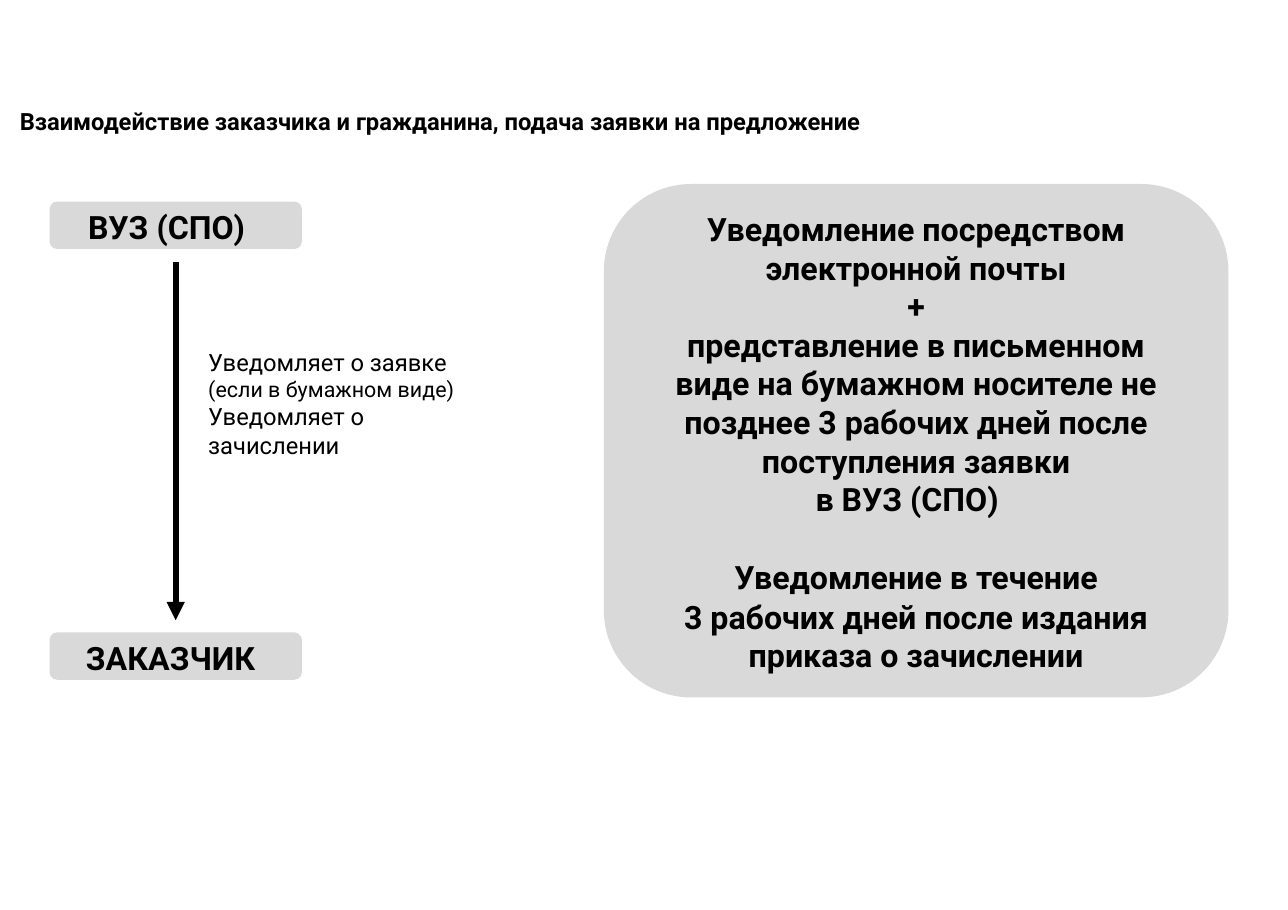
"""Build a slide on how a university notifies the customer about applications."""
import dataclasses
import typing

import lxml.etree
import pptx
import pptx.dml.color
import pptx.enum.shapes
import pptx.enum.text
import pptx.oxml.ns
import pptx.util

Inches, Pt = pptx.util.Inches, pptx.util.Pt
ALIGN, ANCHOR = pptx.enum.text.PP_ALIGN, pptx.enum.text.MSO_ANCHOR
WIDTH, HEIGHT = Inches(11.69), Inches(8.26)


@dataclasses.dataclass(frozen=True)
class Theme:
    font: str = "Roboto"
    ink: str = "000000"
    panel: str = "D9D9D9"
    large: float = 21
    body: float = 15.5
    small: float = 14
    arrow: float = 4


THEME = Theme()


class Area(typing.NamedTuple):
    """Percentages of the slide's width and height."""
    left: float
    top: float
    width: float
    height: float


class Line(typing.NamedTuple):
    text: str
    size: float = THEME.large
    bold: bool = True
    align: ALIGN = ALIGN.LEFT
    before: float = 0
    spacing: typing.Any = 1.0
    indent: float = 0


class Block(typing.NamedTuple):
    area: Area
    lines: list[Line]
    left: float = 0.01
    top: float = 0.02
    radius: float = 0
    anchor: ANCHOR = ANCHOR.TOP


def across(share: float) -> int:
    return round(WIDTH * share / 100)


def down(share: float) -> int:
    return round(HEIGHT * share / 100)


def rgb(value: str) -> pptx.dml.color.RGBColor:
    return pptx.dml.color.RGBColor.from_string(value)


def write_line(p: typing.Any, line: Line) -> None:
    p.text = line.text
    p.alignment = line.align
    p.space_before = Pt(line.before)
    p.line_spacing = line.spacing
    if line.indent:
        p._p.get_or_add_pPr().set("marL", str(Inches(line.indent)))
    for r in p.runs:
        r.font.name = THEME.font
        r.font.size = Pt(line.size)
        r.font.bold = line.bold
        r.font.color.rgb = rgb(THEME.ink)


def draw_block(s: typing.Any, block: Block) -> None:
    a = block.area
    box = across(a.left), down(a.top), across(a.width), down(a.height)
    if block.radius:
        sp = s.shapes.add_shape(pptx.enum.shapes.MSO_SHAPE.ROUNDED_RECTANGLE, *box)
        sp.adjustments[0] = block.radius
        sp.shadow.inherit = False
        sp.fill.solid()
        sp.fill.fore_color.rgb = rgb(THEME.panel)
        sp.line.fill.background()
    else:
        sp = s.shapes.add_textbox(*box)
    tf = sp.text_frame
    tf.word_wrap = True
    tf.vertical_anchor = block.anchor
    tf.margin_left, tf.margin_top = Inches(block.left), Inches(block.top)
    tf.margin_right = tf.margin_bottom = 0
    for i, line in enumerate(block.lines):
        write_line(tf.add_paragraph() if i else tf.paragraphs[0], line)


def draw_arrow(s: typing.Any, x: float, top: float, bottom: float) -> None:
    cx = s.shapes.add_connector(pptx.enum.shapes.MSO_CONNECTOR.STRAIGHT,
                                across(x), down(top), across(x), down(bottom))
    cx.line.color.rgb = rgb(THEME.ink)
    cx.line.width = Pt(THEME.arrow)
    qn = pptx.oxml.ns.qn
    lxml.etree.SubElement(cx.line._get_or_add_ln(), qn("a:tailEnd"), type="triangle")
    lxml.etree.SubElement(cx._element.spPr, qn("a:effectLst"))


def label(text: str, top: float, left: float) -> Block:
    return Block(Area(3.85, top, 19.59, 5.21), [Line(text)],
                 left=left, top=0.03, radius=0.16, anchor=ANCHOR.MIDDLE)


def note_line(text: str, size: float = THEME.body) -> Line:
    return Line(text, size, bold=False, spacing=1.01)


def panel_line(text: str, before: float = 0) -> Line:
    return Line(text, align=ALIGN.CENTER, before=before, spacing=Pt(25.2))


BLOCKS = [
    Block(Area(1.45, 11.5, 73.65, 3.51), [
        Line("Взаимодействие заказчика и гражданина, подача заявки на предложение",
             THEME.body, before=1.3)]),
    label("ВУЗ (СПО)", 22.15, 0.33),
    label("ЗАКАЗЧИК", 69.49, 0.31),
    Block(Area(16.08, 37.9, 22.58, 9.56), [
        note_line("Уведомляет о заявке"),
        note_line("(если в бумажном виде)", THEME.small),
        note_line("Уведомляет о\vзачислении")]),
    Block(Area(46.88, 20.22, 48.5, 56.42), [
        panel_line("Уведомление посредством\vэлектронной почты", 0.8),
        panel_line("+"),
        panel_line("представление в письменном\vвиде на бумажном носителе не\v"
                   "позднее 3 рабочих дней после\vпоступления заявки"),
        Line("в ВУЗ (СПО)", spacing=Pt(25.2), indent=1.69),
        panel_line("Уведомление в течение", 25.8),
        panel_line("3 рабочих дней после издания\vприказа о зачислении", 0.8)],
        left=0, top=0, radius=0.17),
]


def main() -> None:
    prs = pptx.Presentation()
    prs.slide_width, prs.slide_height = WIDTH, HEIGHT
    s = prs.slides.add_slide(prs.slide_layouts[6])
    for block in BLOCKS:
        draw_block(s, block)
    draw_arrow(s, x=13.64, top=28.81, bottom=68.16)
    prs.save("out.pptx")


if __name__ == "__main__":
    main()
